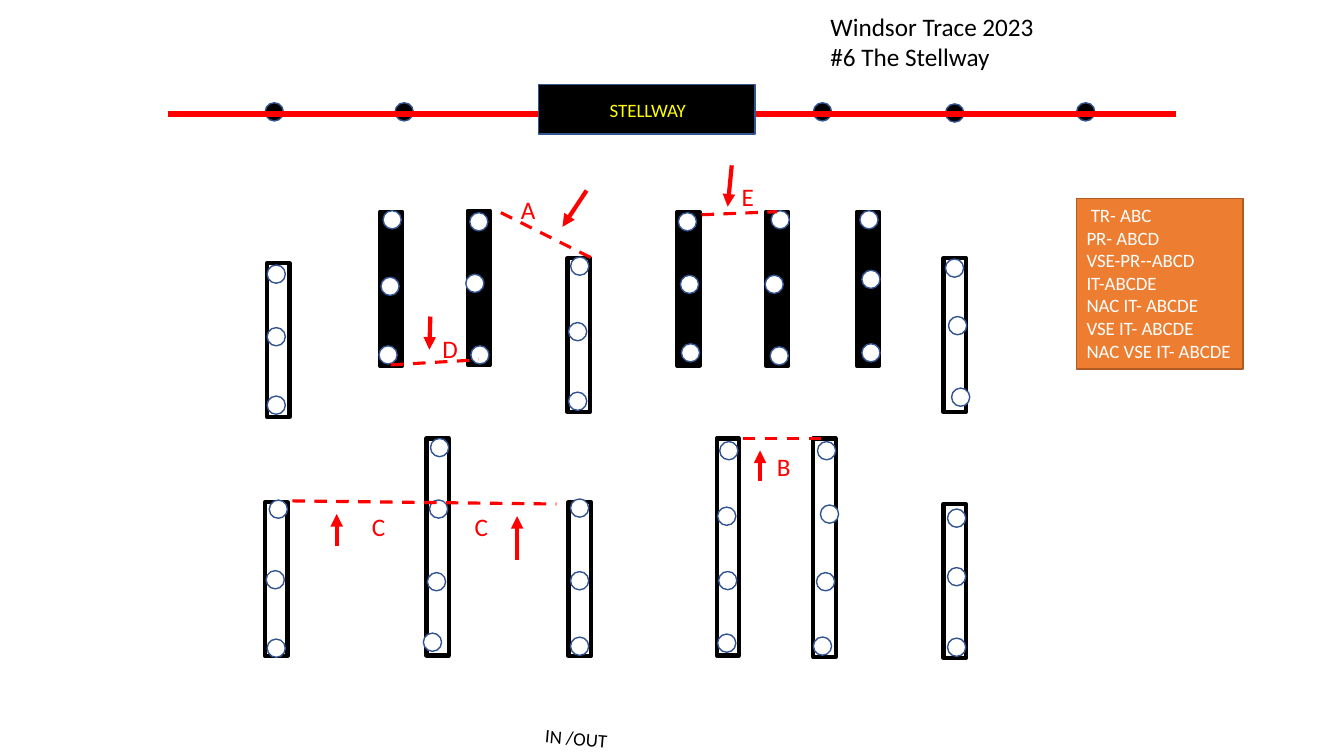
from lxml.etree import SubElement
from pptx import Presentation
from pptx.dml.color import RGBColor
from pptx.enum.dml import MSO_LINE_DASH_STYLE as Dash
from pptx.enum.shapes import MSO_CONNECTOR as Connector, MSO_SHAPE as Shape
from pptx.enum.text import MSO_ANCHOR as Anchor, MSO_AUTO_SIZE as AutoSize, PP_ALIGN as Align
from pptx.oxml.ns import qn
from pptx.util import Pt

COLORS = {
    "black": "000000", "white": "FFFFFF", "red": "FF0000", "yellow": "FFFF00",
    "outline": "325491", "orange": "ED7D31", "rust": "AF5C24",
}
POST_SIZE = 13
BAR_WIDTH = 16

# left, top, height, fill, post offsets from the bar's corner
BARS = [
    (271.4, 151.2, 110, "black", [(2.2, -0.7), (0.7, 46.8), (-0.7, 95.8)]),
    (334.1, 150.5, 110, "black", [(1.4, 1.4), (-1.4, 45.4), (2.2, 96.5)]),
    (483.8, 151.2, 110, "black", [(0.7, 0.7), (2.2, 45.4), (2.9, 94.3)]),
    (547.2, 151.2, 110, "black", [(3.6, -0.7), (-0.7, 45.4), (2.9, 96.5)]),
    (612, 151.2, 110, "black", [(2.2, -0.7), (3.6, 41.8), (3.6, 94.3)]),
    (190.8, 187.9, 110, None, [(0, 1.4), (0, 46.1), (0, 95)]),
    (405.4, 184.3, 110, None, [(2.2, -0.7), (0.7, 46.1), (0.7, 95.8)]),
    (673.9, 184.3, 110, None, [(1.4, 0.7), (3.6, 41.8), (5.8, 92.9)]),
    (189.4, 358.6, 110, None, [(2.9, -1.4), (0.7, 49), (1.4, 97.9)]),
    (304.6, 313.2, 155, None, [(2.9, 0), (2.2, 43.9), (0.7, 95.8), (-2.2, 139)]),
    (406.1, 358.6, 110, None, [(1.4, -2.2), (1.4, 49.7), (1.4, 96.5)]),
    (511.9, 313.2, 155, None, [(2.2, 2.2), (0.7, 49), (1.4, 95), (0.7, 139.7)]),
    (581, 313.2, 156, None, [(2.9, 2.2), (5, 47.5), (2.2, 95.8), (0, 141.8)]),
    (673.9, 360, 110, None, [(2.9, 3.6), (2.9, 45.4), (2.9, 95.8)]),
]

# dashed line start, its run, then letter, letter offset, arrow offset, arrow run
GATES = [
    ((357.8, 151.9), (66.3, 33.1), [("A", (7.2, -16.5), (61.2, -15.8), (-17.2, 25.9))]),
    ((530.6, 313.2), (58.4, 0), [("B", (17.3, 5.8), (12.3, 30.2), (0, -21.6))]),
    ((208.8, 357.8), (188.6, 2.2), [("C", (49.7, 3.6), (31.7, 32.4), (0, -23)),
                                    ("C", (123.1, 3.6), (160.6, 42.5), (0, -31.7))]),
    ((279.4, 260.6), (62.6, -3.6), [("D", (29.5, -25.9), (28, -34.5), (-0.7, 23.7))]),
    ((501.1, 153.4), (54, -2.2), [("E", (21.6, -27.4), (21.6, -35.3), (-2.9, 29.5))]),
]
CLASSES = [" TR- ABC", "PR- ABCD", "VSE-PR--ABCD", "IT-ABCDE",
           "NAC IT- ABCDE", "VSE IT- ABCDE", "NAC VSE IT- ABCDE"]


def rgb(name):
    """Return the named colour."""
    return RGBColor.from_string(COLORS[name])


def add_figure(slide, kind, box, fill, outline, weight=1):
    """Add a preset shape without a shadow."""
    figure = slide.shapes.add_shape(kind, *map(Pt, box))
    figure.shadow.inherit = False
    if fill:
        figure.fill.solid()
        figure.fill.fore_color.rgb = rgb(fill)
    else:
        figure.fill.background()
    figure.line.color.rgb = rgb(outline)
    figure.line.width = Pt(weight)
    return figure


def write(holder, lines, size, color):
    """Write left-aligned lines that do not wrap."""
    frame = holder.text_frame
    frame.word_wrap = False
    frame.auto_size = AutoSize.SHAPE_TO_FIT_TEXT
    frame.vertical_anchor = Anchor.TOP
    frame.text = "\n".join(lines)
    for paragraph in frame.paragraphs:
        paragraph.alignment = Align.LEFT
        paragraph.font.name = "Calibri"
        paragraph.font.size = Pt(size)
        paragraph.font.color.rgb = rgb(color)


def add_label(slide, box, lines, size=18, color="black"):
    """Add a text box."""
    label = slide.shapes.add_textbox(*map(Pt, box))
    write(label, lines, size, color)
    return label


def add_line(slide, start, run, weight, dashed=False, arrow=False):
    """Add a red line from a start point along a run."""
    (x, y), (dx, dy) = start, run
    line = slide.shapes.add_connector(
        Connector.STRAIGHT, Pt(x), Pt(y), Pt(x + dx), Pt(y + dy))
    line.line.color.rgb = rgb("red")
    line.line.width = Pt(weight)
    if dashed:
        line.line.dash_style = Dash.DASH
    properties = line._element.spPr
    if arrow:
        SubElement(properties.find(qn("a:ln")), qn("a:tailEnd"), type="triangle")
    SubElement(properties, qn("a:effectLst"))


def add_post(slide, left, top, fill="white"):
    """Add one round post."""
    add_figure(slide, Shape.OVAL, (left, top, POST_SIZE, POST_SIZE), fill, "outline")


def add_rail(slide, left, top, width):
    """Add the back rail with its posts and the named block."""
    for dx, dy in [(69.2, -8), (162, -8), (460.8, -8), (555.2, -7.2), (648.8, -8)]:
        add_post(slide, left + dx, top + dy, "black")
    add_line(slide, (left, top), (width, 0), 4.5)
    add_figure(slide, Shape.RECTANGLE, (left + 264.3, top - 20.9, 154.8, 35.3),
               "black", "outline")
    add_label(slide, (left + 308.2, top - 14.4, 71.3, 23.8), ["STELLWAY"], 13.5, "yellow")


def add_bar(slide, left, top, height, fill, posts):
    """Add a barrier with the posts that stand on it."""
    add_figure(slide, Shape.RECTANGLE, (left, top, BAR_WIDTH, height), fill, "black", 3)
    for dx, dy in posts:
        add_post(slide, left + dx, top + dy)


def add_gate(slide, start, run, marks):
    """Add a dashed gate with its letters and direction arrows."""
    x, y = start
    add_line(slide, start, run, 2.25, dashed=True)
    for letter, (label_dx, label_dy), (arrow_dx, arrow_dy), arrow_run in marks:
        add_label(slide, (x + label_dx, y + label_dy, 25, 28.8), [letter], color="red")
        add_line(slide, (x + arrow_dx, y + arrow_dy), arrow_run, 3, arrow=True)


def add_classes(slide, box):
    """Add the panel listing the gates for each class."""
    panel = add_figure(slide, Shape.RECTANGLE, box, "orange", "rust")
    write(panel, CLASSES, 13.5, "white")


def main():
    """Build the course map."""
    deck = Presentation()
    deck.slide_width, deck.slide_height = Pt(960), Pt(540)
    slide = deck.slides.add_slide(deck.slide_layouts[6])
    add_rail(slide, 120.2, 81.4, 720)
    for bar in BARS:
        add_bar(slide, *bar)
    entrance = add_label(slide, (382.3, 515.5, 59.8, 23.8), ["IN /OUT"], 13.5)
    entrance.rotation = 4.8
    add_classes(slide, (769, 141.8, 118.8, 121.7))
    add_label(slide, (586.1, 4.3, 161.3, 51.1), ["Windsor Trace 2023", "#6 The Stellway"])
    for gate in GATES:
        add_gate(slide, *gate)
    deck.save("out.pptx")


if __name__ == "__main__":
    main()
